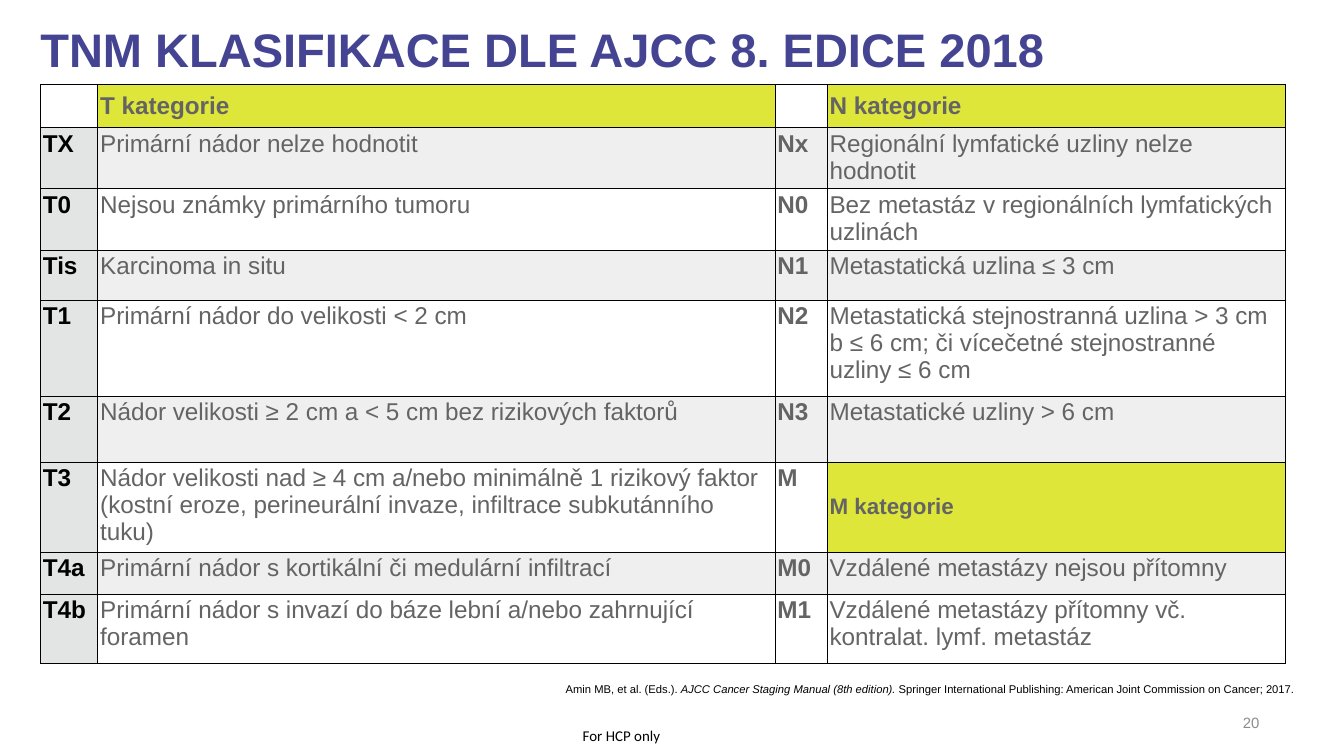
from lxml.etree import SubElement
from pptx import Presentation
from pptx.dml.color import RGBColor
from pptx.enum.text import MSO_ANCHOR as Anchor, PP_ALIGN as Align
from pptx.oxml.ns import qn
from pptx.util import Pt

WHITE = RGBColor(0xFF, 0xFF, 0xFF)
BLACK = RGBColor(0x00, 0x00, 0x00)
GRAY = RGBColor(0x64, 0x64, 0x64)
PAGE_GRAY = RGBColor(0x8C, 0x8C, 0x8C)
LIME = RGBColor(0xDE, 0xE6, 0x3A)
BAND = RGBColor(0xEF, 0xEF, 0xEF)
CODE_FILL = RGBColor(0xE3, 0xE4, 0xE4)
INDIGO = RGBColor(0x44, 0x44, 0x92)

COLUMN_WIDTHS = [30.7, 362.8, 28, 245.7]
ROW_HEIGHTS = [23, 32.8, 32.8, 26.7, 51.6, 35.3, 48.3, 22.7, 37]
HEADERS = ["T kategorie", "N kategorie", "M kategorie"]
ROWS = [
    ["", "T kategorie", "", "N kategorie"],
    ["TX", "Primární nádor nelze hodnotit",
     "Nx", "Regionální lymfatické uzliny nelze hodnotit"],
    ["T0", "Nejsou známky primárního tumoru",
     "N0", "Bez metastáz v regionálních lymfatických uzlinách"],
    ["Tis", "Karcinoma in situ", "N1", "Metastatická uzlina ≤ 3 cm"],
    ["T1", "Primární nádor do velikosti < 2 cm",
     "N2", "Metastatická stejnostranná uzlina > 3 cm b ≤ 6 cm; "
           "či vícečetné stejnostranné uzliny ≤ 6 cm"],
    ["T2", "Nádor velikosti ≥ 2 cm a < 5 cm bez rizikových faktorů",
     "N3", "Metastatické uzliny > 6 cm"],
    ["T3", "Nádor velikosti nad ≥ 4 cm a/nebo minimálně 1 rizikový faktor "
           "(kostní eroze, perineurální invaze, infiltrace subkutánního tuku)",
     "M", "M kategorie"],
    ["T4a", "Primární nádor s kortikální či medulární infiltrací",
     "M0", "Vzdálené metastázy nejsou přítomny"],
    ["T4b", "Primární nádor s invazí do báze lební a/nebo zahrnující foramen",
     "M1", "Vzdálené metastázy přítomny vč. kontralat. lymf. metastáz"],
]


def add_span(para, text, size=13, color=GRAY, bold=False, italic=False, font="Arial"):
    span = para.add_run()
    span.text = text
    span.font.name = font
    span.font.size = Pt(size)
    span.font.color.rgb = color
    span.font.bold = bold
    span.font.italic = italic


def add_box(page, left, top, width, height, inset=0, anchor=Anchor.MIDDLE, align=Align.LEFT):
    box = page.shapes.add_textbox(Pt(left), Pt(top), Pt(width), Pt(height))
    frame = box.text_frame
    frame.word_wrap = True
    frame.vertical_anchor = anchor
    frame.margin_left = frame.margin_right = Pt(inset)
    frame.margin_top = frame.margin_bottom = Pt(min(inset, 3.6))
    para = frame.paragraphs[0]
    para.alignment = align
    return para


deck = Presentation()
deck.slide_width = Pt(720)
deck.slide_height = Pt(405)
page = deck.slides.add_slide(deck.slide_layouts[6])

table = page.shapes.add_table(
    len(ROWS), len(COLUMN_WIDTHS), Pt(21.6), Pt(45.3),
    Pt(sum(COLUMN_WIDTHS)), Pt(sum(ROW_HEIGHTS))).table
table.first_row = False
table.horz_banding = False
for column, width in zip(table.columns, COLUMN_WIDTHS):
    column.width = Pt(width)
for row, height in zip(table.rows, ROW_HEIGHTS):
    row.height = Pt(height)

for r, texts in enumerate(ROWS):
    for c, text in enumerate(texts):
        cell = table.cell(r, c)
        is_header = text in HEADERS
        is_code = c % 2 == 0
        cell.margin_left = cell.margin_right = Pt(1.4)
        cell.margin_top = cell.margin_bottom = Pt(1.4)
        cell.vertical_anchor = Anchor.MIDDLE if is_header else Anchor.TOP
        add_span(cell.text_frame.paragraphs[0], text,
                 size=12 if text == "M kategorie" else 13,
                 color=BLACK if c == 0 else GRAY, bold=is_header or is_code)

        properties = cell._tc.get_or_add_tcPr()
        for side in ("a:lnL", "a:lnR", "a:lnT", "a:lnB"):
            line = SubElement(properties, qn(side), w=str(Pt(0.25)))
            SubElement(SubElement(line, qn("a:solidFill")), qn("a:srgbClr"), val=str(BLACK))

        cell.fill.solid()
        if is_header:
            cell.fill.fore_color.rgb = LIME
        elif c == 0 and r > 0:
            cell.fill.fore_color.rgb = CODE_FILL
        else:
            cell.fill.fore_color.rgb = BAND if r % 2 else WHITE

title = add_box(page, 21.6, 10.8, 639.4, 34.6)
title.line_spacing = 0.9
add_span(title, "TNM KLASIFIKACE DLE AJCC 8. EDICE 2018", size=25.2, color=INDIGO, bold=True)

number = add_box(page, 636.5, 382.3, 38.2, 13.7, anchor=Anchor.TOP, align=Align.RIGHT)
add_span(number, "20", size=8, color=PAGE_GRAY)

citation = add_box(page, 300.2, 362.2, 415, 13.7, inset=2.9)
add_span(citation, "Amin MB, et al. (Eds.). ", size=6, color=BLACK)
add_span(citation, "AJCC Cancer Staging Manual (8th edition). ", size=6, color=BLACK, italic=True)
add_span(citation, "Springer International Publishing: American Joint Commission on Cancer; 2017.",
         size=6, color=BLACK)

audience = add_box(page, 276.5, 385.2, 113, 18, inset=7.2, align=Align.CENTER)
add_span(audience, "For HCP only", size=8, color=BLACK, font="Calibri")

deck.save("out.pptx")
